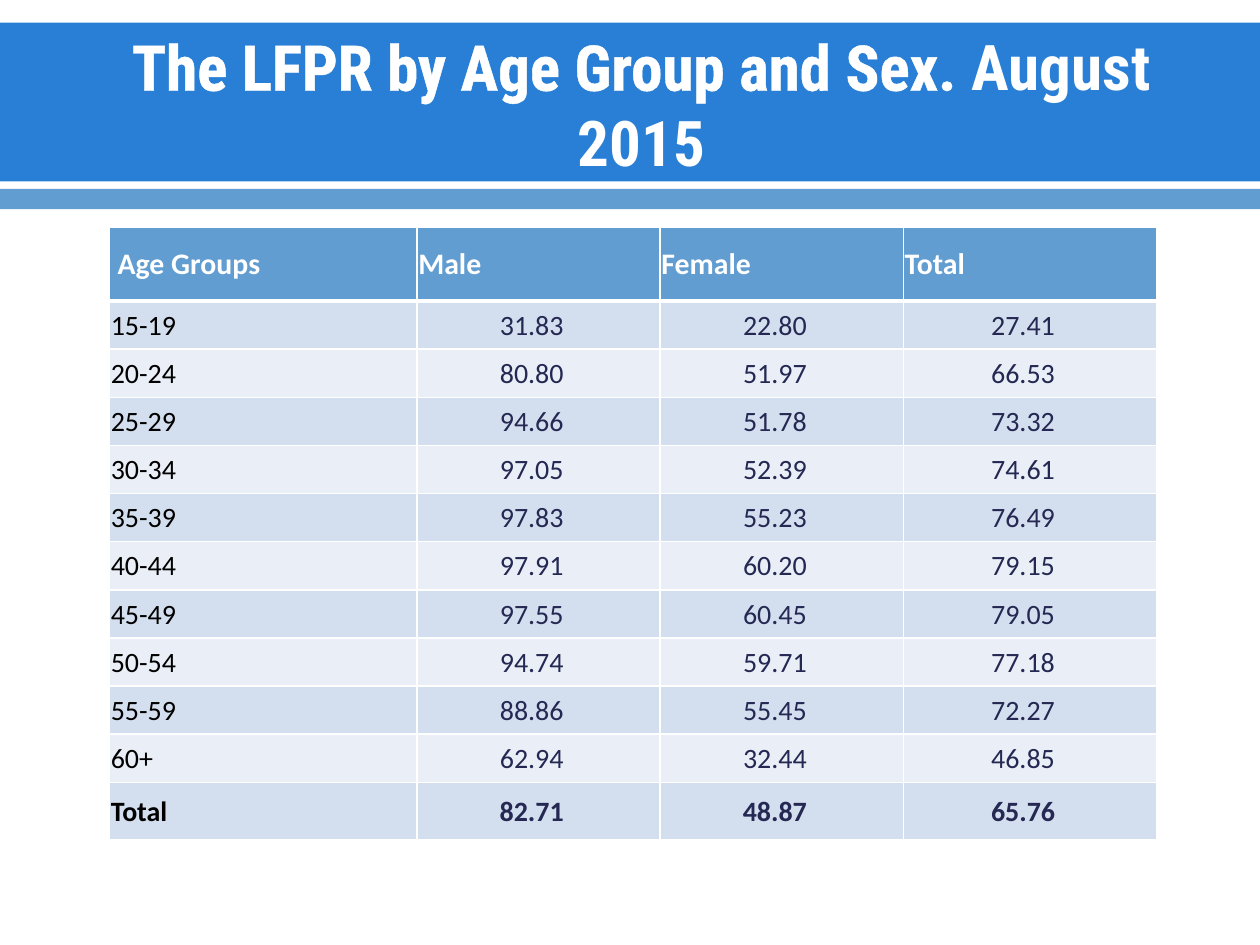
from lxml import etree
from pptx import Presentation
from pptx.dml.color import RGBColor
from pptx.enum.shapes import MSO_SHAPE
from pptx.enum.text import MSO_ANCHOR, PP_ALIGN
from pptx.oxml.ns import qn
from pptx.util import Inches, Pt

RECT = MSO_SHAPE.RECTANGLE
MIDDLE = MSO_ANCHOR.MIDDLE
LEFT, CENTER = PP_ALIGN.LEFT, PP_ALIGN.CENTER

WHITE = RGBColor(0xFF, 0xFF, 0xFF)
BLACK = RGBColor(0, 0, 0)
NAVY = RGBColor(0x24, 0x28, 0x52)
BANNER = RGBColor(0x29, 0x7F, 0xD5)
ACCENT = RGBColor(0x62, 0x9D, 0xD1)
BANDS = [RGBColor(0xD3, 0xDF, 0xEE), RGBColor(0xEA, 0xEF, 0xF7)]

HEADERS = [" Age Groups", "Male", "Female", "Total"]
RATES = [
    ("15-19", 31.83, 22.80, 27.41),
    ("20-24", 80.80, 51.97, 66.53),
    ("25-29", 94.66, 51.78, 73.32),
    ("30-34", 97.05, 52.39, 74.61),
    ("35-39", 97.83, 55.23, 76.49),
    ("40-44", 97.91, 60.20, 79.15),
    ("45-49", 97.55, 60.45, 79.05),
    ("50-54", 94.74, 59.71, 77.18),
    ("55-59", 88.86, 55.45, 72.27),
    ("60+", 62.94, 32.44, 46.85),
    ("Total", 82.71, 48.87, 65.76),
]
COL_WIDTHS = [2.44, 1.93, 1.93, 2.01]
HEADER_HEIGHT, TOTAL_HEIGHT = 0.59, 0.46


def add_run(p, text, **font):
    r = p.add_run()
    r.text = text
    color = font.pop("color")
    for name, value in font.items():
        setattr(r.font, name, value)
    r.font.color.rgb = color
    return r


def add_line(parent, tag, index, width, color):
    """Insert a solid outline or cell border at the given child index."""
    ln = etree.Element(qn(tag), w=str(int(width)))
    fill = etree.SubElement(ln, qn("a:solidFill"))
    etree.SubElement(fill, qn("a:srgbClr"), val=str(color))
    parent.insert(index, ln)


def add_bar(s, left, top, width, height, color):
    bar = s.shapes.add_shape(RECT, *map(Inches, (left, top, width, height)))
    bar.shadow.inherit = False
    bar.fill.solid()
    bar.fill.fore_color.rgb = color
    bar.line.fill.background()


def add_title(s, left, top, width, height):
    sp = s.shapes.add_textbox(*map(Inches, (left, top, width, height)))
    tf = sp.text_frame
    tf.word_wrap = True
    tf.vertical_anchor = MIDDLE
    p = tf.paragraphs[0]
    p.alignment = CENTER
    font = dict(name="Roboto Condensed", size=Pt(36), bold=True, color=WHITE)
    r = add_run(p, "The LFPR by Age Group and Sex. ", **font)
    add_line(r.font.fill._xPr, "a:ln", 0, Pt(1.1), WHITE)
    add_run(p, "August 2015", **font)


def style_cell(cell, text, fill, align, right_inset, bottom_border, **font):
    cell.fill.solid()
    cell.fill.fore_color.rgb = fill
    cell.vertical_anchor = MIDDLE
    cell.margin_left = cell.margin_top = Inches(0.01)
    cell.margin_right, cell.margin_bottom = Inches(right_inset), 0
    p = cell.text_frame.paragraphs[0]
    p.alignment = align
    add_run(p, text, name="Calibri", **font)
    tc_pr = cell._tc.get_or_add_tcPr()
    for i, side in enumerate("LRTB"):
        width = bottom_border if side == "B" else 1
        add_line(tc_pr, f"a:ln{side}", i, Pt(width), WHITE)


def add_rate_table(s, left, top, width, height):
    frame = s.shapes.add_table(len(RATES) + 1, len(HEADERS),
                               *map(Inches, (left, top, width, height)))
    table = frame.table
    for col, col_width in zip(table.columns, COL_WIDTHS):
        col.width = Inches(col_width)
    body_height = (height - HEADER_HEIGHT - TOTAL_HEIGHT) / (len(RATES) - 1)
    heights = [HEADER_HEIGHT] + [body_height] * (len(RATES) - 1) + [TOTAL_HEIGHT]
    for row, row_height in zip(table.rows, heights):
        row.height = Inches(row_height)

    for c, text in enumerate(HEADERS):
        style_cell(table.cell(0, c), text, ACCENT, LEFT, 0.01, 3,
                   size=Pt(17), bold=True, color=WHITE)
    for i, (group, *rates) in enumerate(RATES):
        fill = BANDS[i % 2]
        font = dict(size=Pt(16), bold=group == "Total")
        style_cell(table.cell(i + 1, 0), group, fill, LEFT, 0.01, 1,
                   color=BLACK, **font)
        for c, rate in enumerate(rates, 1):
            style_cell(table.cell(i + 1, c), f"{rate:.2f}", fill, CENTER, 0.12, 1,
                       color=NAVY, **font)
    # The header keeps its thick lower edge where the first body row meets it.
    for c in range(len(HEADERS)):
        top_line = table.cell(1, c)._tc.tcPr.find(qn("a:lnT"))
        top_line.set("w", str(int(Pt(3))))


def main():
    prs = Presentation()
    prs.slide_width, prs.slide_height = Inches(10), Inches(7.5)
    s = prs.slides.add_slide(prs.slide_layouts[6])
    add_bar(s, 0, 0.18, 10, 1.26, BANNER)
    add_bar(s, 0, 1.5, 10, 0.16, ACCENT)
    add_rate_table(s, 0.87, 1.8, sum(COL_WIDTHS), 4.87)
    add_title(s, 0.59, 0.21, 9, 1.22)
    prs.save("out.pptx")


if __name__ == "__main__":
    main()
